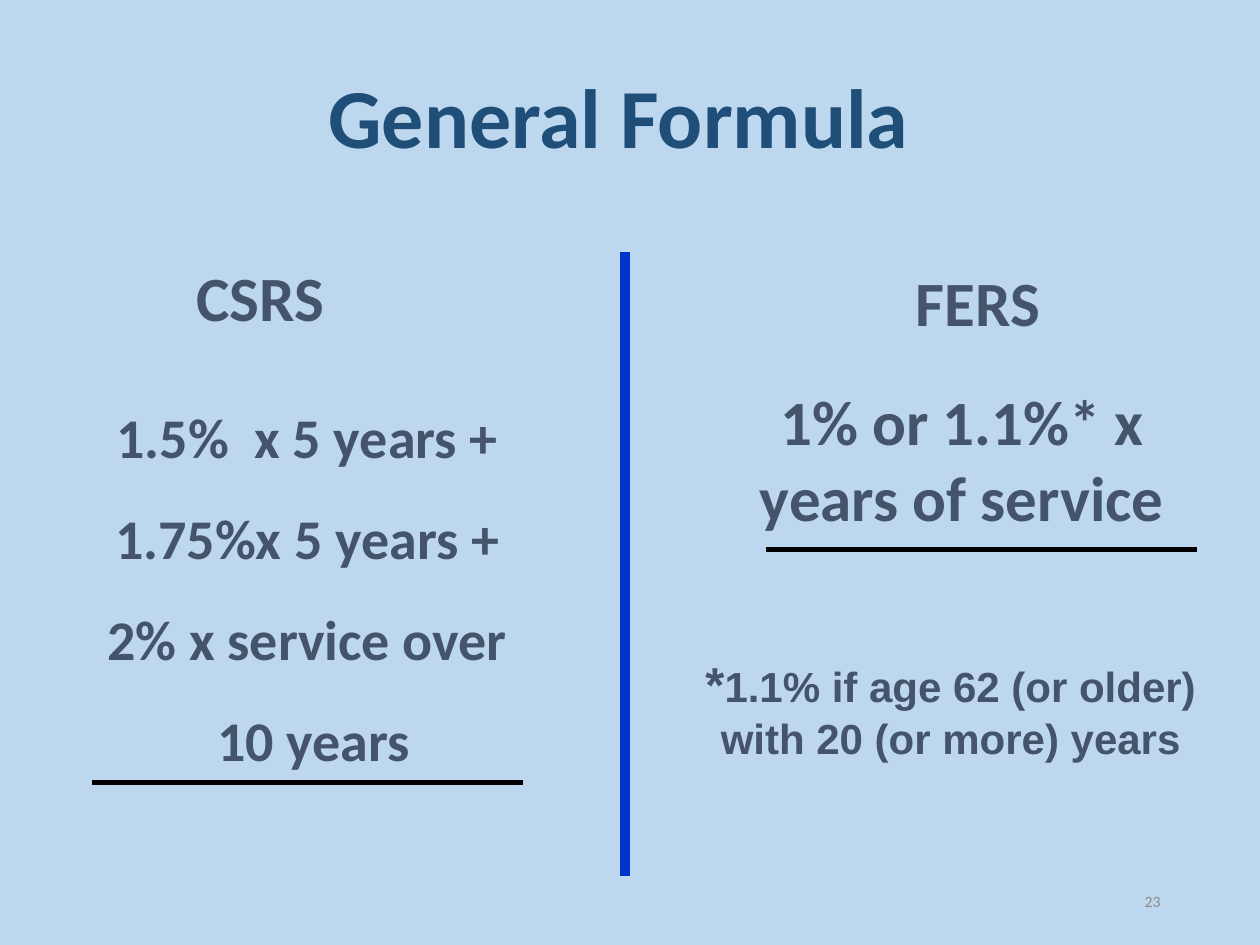
"""Build the General Formula slide comparing CSRS and FERS."""
from lxml import etree
from pptx import Presentation
from pptx.dml.color import RGBColor
from pptx.enum.shapes import MSO_CONNECTOR
from pptx.enum.text import MSO_ANCHOR, PP_ALIGN
from pptx.oxml.ns import qn
from pptx.util import Inches, Pt

BACKGROUND = RGBColor(0xBD, 0xD7, 0xEE)
NAVY = RGBColor(0x1F, 0x4E, 0x79)
SLATE = RGBColor(0x44, 0x54, 0x6A)
GRAY = RGBColor(0x8C, 0x8C, 0x8C)
BLUE = RGBColor(0x00, 0x33, 0xCC)
BLACK = RGBColor(0x00, 0x00, 0x00)


def add_text(slide, box, paragraphs, color, font="Calibri", bold=True,
             align=PP_ALIGN.CENTER, anchor=MSO_ANCHOR.TOP, spacing=1.0):
    shape = slide.shapes.add_textbox(*[Inches(value) for value in box])
    frame = shape.text_frame
    frame.word_wrap = True
    frame.vertical_anchor = anchor
    for index, runs in enumerate(paragraphs):
        paragraph = frame.add_paragraph() if index else frame.paragraphs[0]
        paragraph.alignment = align
        paragraph.line_spacing = spacing
        for text, size in runs:
            run = paragraph.add_run()
            run.text = text
            run.font.name = font
            run.font.size = Pt(size)
            run.font.bold = bold
            run.font.color.rgb = color


presentation = Presentation()
presentation.slide_width = Inches(10)
presentation.slide_height = Inches(7.5)
slide = presentation.slides.add_slide(presentation.slide_layouts[6])
slide.background.fill.solid()
slide.background.fill.fore_color.rgb = BACKGROUND

add_text(slide, (0.91, 0.48, 8, 0.97), [[("General Formula", 48)]], NAVY,
         anchor=MSO_ANCHOR.MIDDLE, spacing=0.9)
add_text(slide, (7.06, 6.95, 2.25, 0.4), [[("23", 9)]], GRAY, bold=False,
         align=PP_ALIGN.RIGHT, anchor=MSO_ANCHOR.MIDDLE)

add_text(slide, (0.19, 2, 3.75, 0.71), [[("CSRS", 36)]], SLATE)
add_text(slide, (5.55, 2.04, 4.42, 0.71), [[("FERS", 36)]], SLATE)

csrs_lines = ["1.5%  x 5 years +", "1.75%x 5 years +", "2% x service over", " 10 years"]
add_text(slide, (0.19, 2.88, 4.5, 3.33), [[(line, 32)] for line in csrs_lines],
         SLATE, spacing=1.5)
add_text(slide, (5.49, 2.99, 4.29, 1.92),
         [[("1% or 1.1%* x years of service", 36)]], SLATE)
add_text(slide, (5.49, 5.14, 4.11, 0.98),
         [[("*", 28), ("1.1% if age 62 (or older) with 20 (or more) years", 24)]],
         SLATE, font="Arial")

rules = [
    ((4.96, 2, 4.96, 6.95), BLUE, 6),
    ((0.73, 6.21, 4.15, 6.21), BLACK, 3),
    ((6.08, 4.36, 9.5, 4.36), BLACK, 3),
]
for ends, color, width in rules:
    connector = slide.shapes.add_connector(
        MSO_CONNECTOR.STRAIGHT, *[Inches(value) for value in ends])
    connector.line.color.rgb = color
    connector.line.width = Pt(width)
    etree.SubElement(connector._element.spPr, qn("a:effectLst"))

presentation.save("out.pptx")
